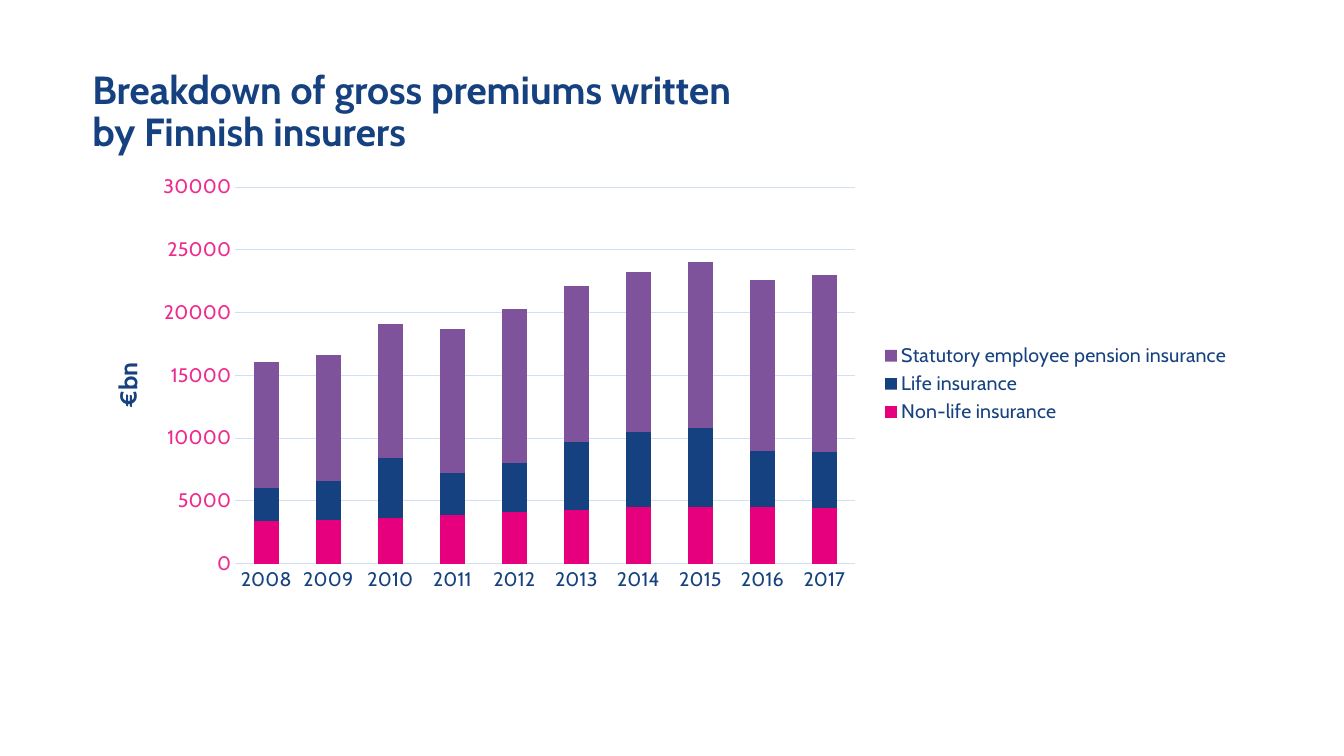
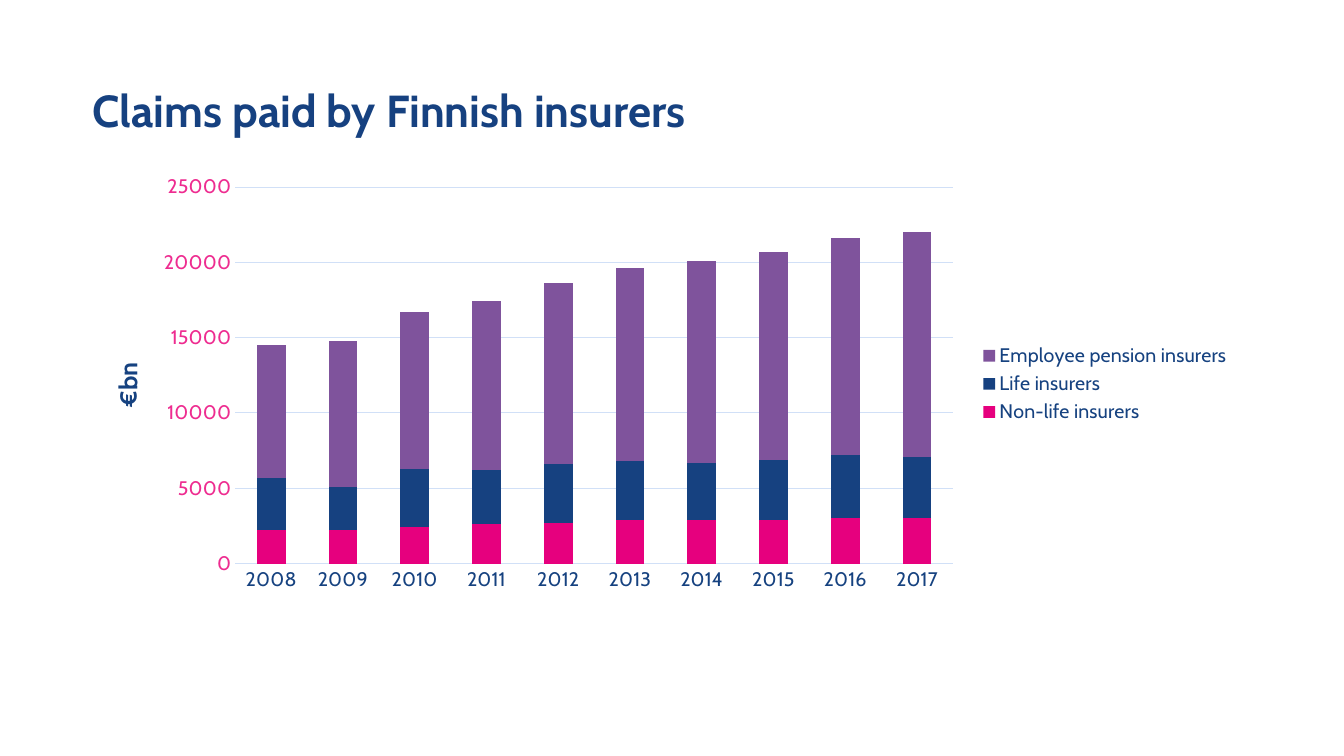
from dataclasses import dataclass

from lxml.etree import SubElement
from pptx import Presentation
from pptx.chart.data import CategoryChartData as Data
from pptx.dml.color import RGBColor as Rgb
from pptx.enum.chart import XL_CHART_TYPE as Kind, XL_LEGEND_POSITION as Side
from pptx.enum.chart import XL_TICK_MARK as Tick
from pptx.enum.text import MSO_ANCHOR as Anchor, MSO_AUTO_SIZE as Fit, PP_ALIGN as Align
from pptx.oxml.ns import qn
from pptx.util import Inches, Pt


@dataclass(frozen=True)
class Theme:
    face: str = "Cabin"
    head: str = "164180"
    text: str = "164280"
    scale: str = "EE2C90"
    rule: str = "D1E0F7"
    fills: tuple = ("E6007E", "164180", "7F539C")
    body: int = 14
    unit: int = 18
    line: float = 0.75


def put(item, **vals):
    for name, val in vals.items():
        setattr(item, name, val)


def pin(node, index, **spots):
    for old in node.findall(qn("c:layout")):
        node.remove(old)
    layout = SubElement(node, qn("c:layout"))
    node.insert(index, layout)
    manual = SubElement(layout, qn("c:manualLayout"))
    if "w" in spots:
        SubElement(manual, qn("c:layoutTarget")).set("val", "inner")
    for axis in "xy":
        SubElement(manual, qn(f"c:{axis}Mode")).set("val", "edge")
    for name, val in spots.items():
        SubElement(manual, qn(f"c:{name}")).set("val", str(val))


class Deck:
    cols, rows = 16, 9

    def __init__(self, theme):
        self.theme = theme
        self.show = Presentation()
        put(self.show, slide_width=Inches(13.33), slide_height=Inches(7.5))
        self.slide = None

    def box(self, x, y, w, h):
        col = self.show.slide_width / self.cols
        row = self.show.slide_height / self.rows
        return [round(v) for v in (x * col, y * row, w * col, h * row)]

    def font(self, font, size, color, bold=False):
        put(font, name=self.theme.face, size=Pt(size), bold=bold)
        font.color.rgb = Rgb.from_string(color)

    def stroke(self, line):
        line.width = Pt(self.theme.line)
        line.color.rgb = Rgb.from_string(self.theme.rule)

    def page(self, text, size):
        self.slide = self.show.slides.add_slide(self.show.slide_layouts[5])
        title = self.slide.shapes.title
        spot = self.box(0.98, 0.47, 13.8, 1.74)
        put(title, **dict(zip(("left", "top", "width", "height"), spot)))
        frame = title.text_frame
        put(frame, text=text, word_wrap=True, auto_size=Fit.NONE,
            vertical_anchor=Anchor.MIDDLE)
        para = frame.paragraphs[0]
        put(para, alignment=Align.LEFT, line_spacing=0.9)
        for run in para.runs:
            self.font(run.font, size, self.theme.head, True)

    def stack(self, cats, series, top, width):
        theme = self.theme
        data = Data()
        data.categories = cats
        for name, vals in series.items():
            data.add_series(name, vals)
        chart = self.slide.shapes.add_chart(
            Kind.COLUMN_STACKED, *self.box(0.98, 1.99, 13.8, 5.16), data).chart
        put(chart, has_title=False, has_legend=True)
        self.font(chart.font, theme.body, theme.text)
        plot = chart.plots[0]
        put(plot, gap_width=150, overlap=100, vary_by_categories=False)
        for bars, color in zip(plot.series, theme.fills):
            bars.format.fill.solid()
            bars.format.fill.fore_color.rgb = Rgb.from_string(color)
        put(chart.legend, position=Side.RIGHT, include_in_layout=False)
        self.font(chart.legend.font, theme.body, theme.text)
        years, scale = chart.category_axis, chart.value_axis
        for axis, color in ((years, theme.text), (scale, theme.scale)):
            put(axis, major_tick_mark=Tick.NONE, minor_tick_mark=Tick.NONE)
            self.font(axis.tick_labels.font, theme.body, color)
        self.stroke(years.format.line)
        scale.format.line.fill.background()
        put(scale, minimum_scale=0, maximum_scale=top, major_unit=5000,
            has_major_gridlines=True, has_title=True)
        self.stroke(scale.major_gridlines.format.line)
        frame = scale.axis_title.text_frame
        frame.text = "€bn"
        self.font(frame.paragraphs[0].runs[0].font, theme.unit, theme.text, True)
        area = chart.element.find(f".//{qn('c:plotArea')}")
        pin(area, 0, x=0.132, y=0.046, w=width, h=0.869)
        pin(area.find(f".//{qn('c:title')}"), 1, x=0.02, y=0.44)


def main():
    deck = Deck(Theme())
    years = [str(year) for year in range(2008, 2018)]
    deck.page("Breakdown of gross premiums written\vby Finnish insurers", 28)
    deck.stack(years, {
        "Non-life insurance":
            (3400, 3500, 3600, 3900, 4100, 4300, 4500, 4500, 4500, 4400),
        "Life insurance":
            (2600, 3100, 4800, 3300, 3900, 5400, 6000, 6300, 4500, 4500),
        "Statutory employee pension insurance":
            (10100, 10000, 10700, 11500, 12300, 12400, 12700, 13200, 13600, 14100),
    }, 30000, 0.535)
    deck.page("Claims paid by Finnish insurers", 32)
    deck.stack(years, {
        "Non-life insurers":
            (2200, 2200, 2400, 2600, 2700, 2900, 2900, 2900, 3000, 3000),
        "Life insurers":
            (3500, 2900, 3900, 3600, 3900, 3900, 3800, 4000, 4200, 4100),
        "Employee pension insurers":
            (8800, 9700, 10400, 11200, 12000, 12800, 13400, 13800, 14400, 14900),
    }, 25000, 0.619)
    deck.show.save("out.pptx")


if __name__ == "__main__":
    main()
